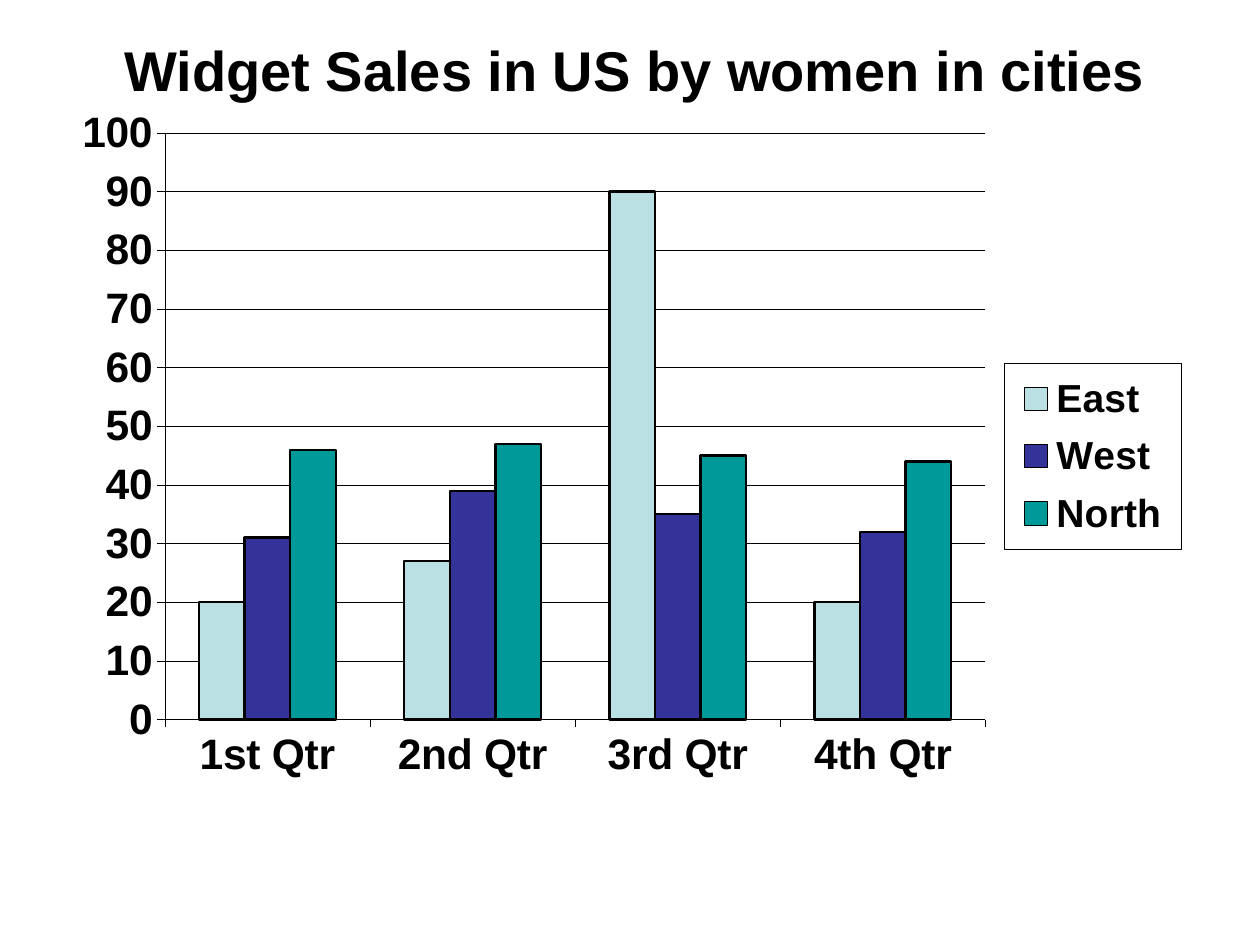
import dataclasses

import pptx
import pptx.chart.data
import pptx.dml.color
import pptx.enum.chart
import pptx.enum.text
import pptx.oxml
import pptx.oxml.ns
import pptx.util

WIDE, HIGH = 10, 7.5
FONT = "Arial"
HAIR = 0.34
INK = {"text": "000000", "line": "000000", "back": "FFFFFF",
       "East": "BBE0E3", "West": "333399", "North": "009999"}
TERMS = ["1st Qtr", "2nd Qtr", "3rd Qtr", "4th Qtr"]


@dataclasses.dataclass
class Box:
    """Place and size as shares of the frame around it."""
    left: float
    top: float
    width: float
    height: float

    def scale(self) -> list[int]:
        return [pptx.util.Inches(part * full) for part, full in zip(
            dataclasses.astuple(self), (WIDE, HIGH, WIDE, HIGH))]


@dataclasses.dataclass
class Region:
    name: str
    sales: list[int]


REGIONS = [Region("East", [20, 27, 90, 20]),
           Region("West", [31, 39, 35, 32]),
           Region("North", [46, 47, 45, 44])]
HEAD = Box(0.075, 0.023, 0.858, 0.1)
FRAME = Box(0.064, 0.096, 0.879, 0.773)
PLOT = Box(0.076, 0.058, 0.741, 0.803)
KEY = Box(0.834, 0.373, 0.16, 0.255)


def color(name: str) -> pptx.dml.color.RGBColor:
    return pptx.dml.color.RGBColor.from_string(INK[name])


def set_font(font, size: float) -> None:
    font.name, font.size, font.bold = FONT, pptx.util.Pt(size), True
    font.color.rgb = color("text")


def set_line(line, width: float) -> None:
    line.color.rgb = color("line")
    line.width = pptx.util.Pt(width)


def layout(box: Box, inner: bool = False):
    """Build a manual layout for a part of the chart."""
    target = '<c:layoutTarget val="inner"/>' if inner else ""
    sides = "".join(f'<c:{tag} val="{share}"/>' for tag, share in zip(
        "xywh", dataclasses.astuple(box)))
    return pptx.oxml.parse_xml(
        f'<c:layout {pptx.oxml.ns.nsdecls("c")}><c:manualLayout>{target}'
        f'<c:xMode val="edge"/><c:yMode val="edge"/>{sides}'
        '</c:manualLayout></c:layout>')


def add_title(slide, text: str) -> None:
    title = slide.shapes.title
    title.left, title.top, title.width, title.height = HEAD.scale()
    frame = title.text_frame
    frame.text = text
    frame.word_wrap = True
    frame.vertical_anchor = pptx.enum.text.MSO_ANCHOR.MIDDLE
    frame.paragraphs[0].alignment = pptx.enum.text.PP_ALIGN.CENTER
    set_font(frame.paragraphs[0].runs[0].font, 32)


def style_axis(axis) -> None:
    axis.major_tick_mark = pptx.enum.chart.XL_TICK_MARK.OUTSIDE
    axis.minor_tick_mark = pptx.enum.chart.XL_TICK_MARK.NONE
    set_font(axis.tick_labels.font, 24.3)
    set_line(axis.format.line, HAIR)


def add_key(chart) -> None:
    chart.has_legend = True
    key = chart.legend
    key.position = pptx.enum.chart.XL_LEGEND_POSITION.RIGHT
    key.include_in_layout = False
    set_font(key.font, 22.3)
    # Place and border of the legend
    over = key._element.find(pptx.oxml.ns.qn("c:overlay"))
    over.addprevious(layout(KEY))
    over.addnext(pptx.oxml.parse_xml(
        f'<c:spPr {pptx.oxml.ns.nsdecls("c", "a")}>'
        f'<a:solidFill><a:srgbClr val="{INK["back"]}"/></a:solidFill>'
        f'<a:ln w="{pptx.util.Pt(HAIR)}"><a:solidFill>'
        f'<a:srgbClr val="{INK["line"]}"/></a:solidFill></a:ln></c:spPr>'))


def add_sales(slide) -> None:
    data = pptx.chart.data.CategoryChartData()
    data.categories = TERMS
    for region in REGIONS:
        data.add_series(region.name, region.sales)
    kind = pptx.enum.chart.XL_CHART_TYPE.COLUMN_CLUSTERED
    chart = slide.shapes.add_chart(kind, *FRAME.scale(), data).chart
    chart.has_title = False
    set_font(chart.font, 24.3)

    # Bars
    bars = chart.plots[0]
    bars.gap_width, bars.overlap = 150, 0
    bars.vary_by_categories = False
    for series in bars.series:
        series.format.fill.solid()
        series.format.fill.fore_color.rgb = color(series.name)
        set_line(series.format.line, 1.35)

    # Axes and grid
    terms, sums = chart.category_axis, chart.value_axis
    for axis in (terms, sums):
        style_axis(axis)
    terms.tick_label_position = pptx.enum.chart.XL_TICK_LABEL_POSITION.LOW
    sums.minimum_scale, sums.maximum_scale, sums.major_unit = 0, 100, 10
    sums.has_major_gridlines = True
    set_line(sums.major_gridlines.format.line, HAIR)

    # Plot area
    area = chart._chartSpace.chart.plotArea
    for old in area.findall(pptx.oxml.ns.qn("c:layout")):
        area.remove(old)
    area.insert(0, layout(PLOT, inner=True))
    add_key(chart)


def main() -> None:
    deck = pptx.Presentation()
    deck.slide_width = pptx.util.Inches(WIDE)
    deck.slide_height = pptx.util.Inches(HIGH)
    slide = deck.slides.add_slide(deck.slide_layouts[5])
    add_title(slide, "Widget Sales in US by women in cities")
    add_sales(slide)
    deck.save("out.pptx")


if __name__ == "__main__":
    main()
